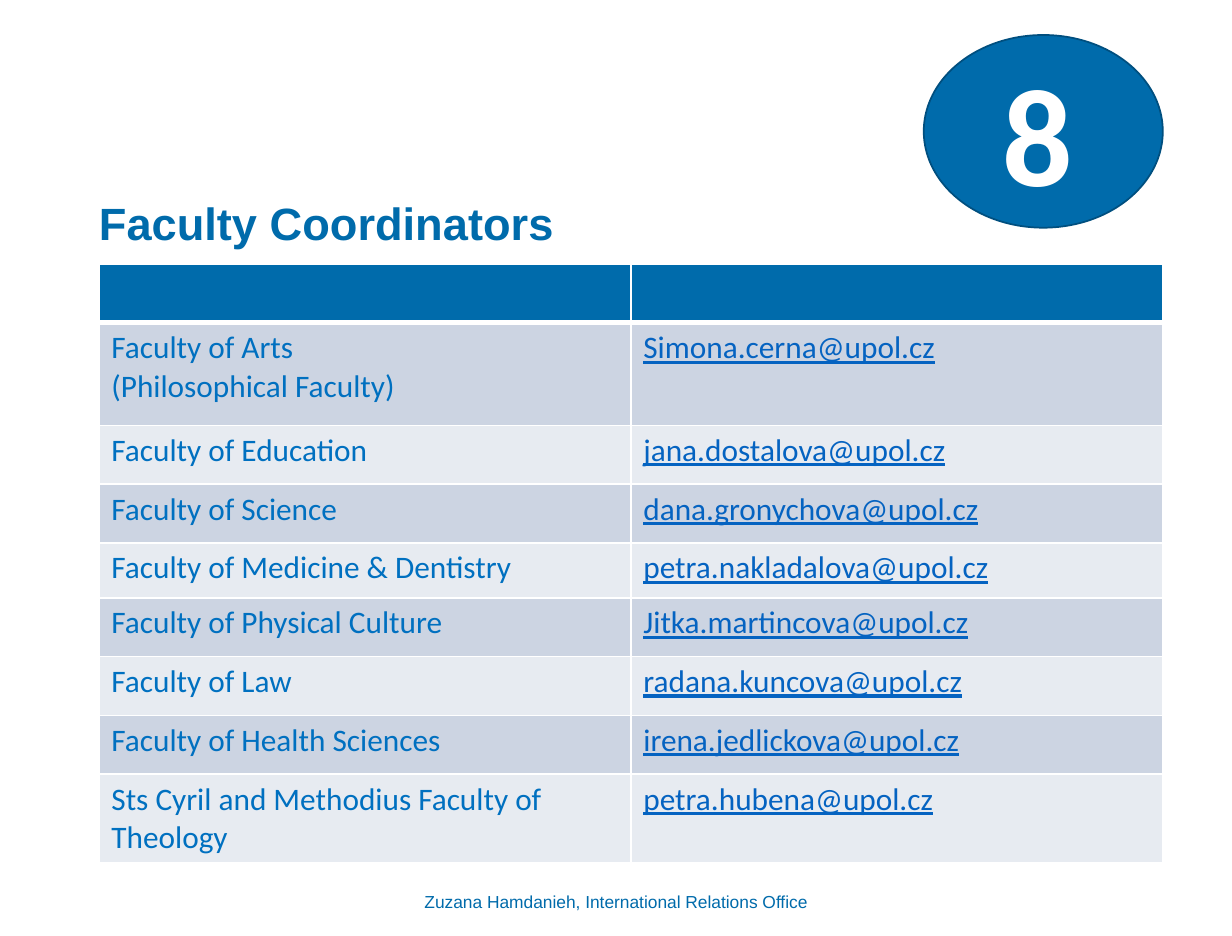
from lxml.etree import SubElement
from pptx import Presentation
from pptx.dml.color import RGBColor
from pptx.enum.shapes import MSO_SHAPE
from pptx.enum.text import MSO_ANCHOR, PP_ALIGN
from pptx.oxml.ns import qn
from pptx.util import Cm, Inches, Pt

BLUE = RGBColor(0x00, 0x6B, 0xAB)
DARK_BLUE = RGBColor(0x00, 0x4F, 0x7F)
TEXT_BLUE = RGBColor(0x00, 0x70, 0xC0)
LINK_BLUE = RGBColor(0x05, 0x63, 0xC1)
WHITE = RGBColor(0xFF, 0xFF, 0xFF)
BAND_DARK = RGBColor(0xCC, 0xD4, 0xE2)
BAND_LIGHT = RGBColor(0xE7, 0xEB, 0xF1)

COORDINATORS = [
    (["Faculty of Arts", "(Philosophical Faculty)"], "Simona.cerna@upol.cz"),
    (["Faculty of Education"], "jana.dostalova@upol.cz"),
    (["Faculty of Science"], "dana.gronychova@upol.cz"),
    (["Faculty of Medicine & Dentistry"], "petra.nakladalova@upol.cz"),
    (["Faculty of Physical Culture"], "Jitka.martincova@upol.cz"),
    (["Faculty of Law"], "radana.kuncova@upol.cz"),
    (["Faculty of Health Sciences"], "irena.jedlickova@upol.cz"),
    (["Sts Cyril and Methodius Faculty of Theology"], "petra.hubena@upol.cz"),
]
ROW_HEIGHTS = [0.47, 0.82, 0.47, 0.47, 0.44, 0.47, 0.47, 0.47, 0.7]


class CoordinatorSlide:
    heading_font = "Arial"
    body_font = "Calibri"

    def __init__(self, presentation):
        self.slide = presentation.slides.add_slide(presentation.slide_layouts[5])

    def add_run(self, paragraph, text, size, color, font, bold=False, underline=False):
        run = paragraph.add_run()
        run.text = text
        run.font.size = Pt(size)
        run.font.name = font
        run.font.color.rgb = color
        run.font.bold = bold
        run.font.underline = underline

    def prepare_frame(self, shape, anchor):
        frame = shape.text_frame
        frame.word_wrap = True
        frame.vertical_anchor = anchor
        frame.margin_left = frame.margin_right = 0
        frame.margin_top = frame.margin_bottom = 0
        return frame.paragraphs[0]

    def add_title(self, text, left, top, width, height):
        title = self.slide.shapes.title
        title.left, title.top = Inches(left), Inches(top)
        title.width, title.height = Inches(width), Inches(height)
        paragraph = self.prepare_frame(title, MSO_ANCHOR.TOP)
        paragraph.alignment = PP_ALIGN.LEFT
        paragraph.line_spacing = 0.9
        self.add_run(paragraph, text, 26, BLUE, self.heading_font, bold=True)

    def add_badge(self, text, left, top, width, height):
        badge = self.slide.shapes.add_shape(
            MSO_SHAPE.OVAL, Inches(left), Inches(top), Inches(width), Inches(height))
        badge.shadow.inherit = False
        badge.fill.solid()
        badge.fill.fore_color.rgb = BLUE
        badge.line.color.rgb = DARK_BLUE
        badge.line.width = Pt(1)
        paragraph = self.prepare_frame(badge, MSO_ANCHOR.MIDDLE)
        badge.text_frame.margin_left = Inches(0.35)
        paragraph.alignment = PP_ALIGN.LEFT
        self.add_run(paragraph, text, 80, WHITE, self.body_font, bold=True)

    def add_footer(self, text, left, top, width, height):
        footer = self.slide.shapes.add_textbox(
            Inches(left), Inches(top), Inches(width), Inches(height))
        paragraph = self.prepare_frame(footer, MSO_ANCHOR.BOTTOM)
        paragraph.alignment = PP_ALIGN.CENTER
        self.add_run(paragraph, text, 10, BLUE, self.heading_font)

    def style_cell(self, cell, color, top_width=1, bottom_width=1):
        properties = cell._tc.get_or_add_tcPr()
        widths = {"a:lnL": 1, "a:lnR": 1, "a:lnT": top_width, "a:lnB": bottom_width}
        for tag, width in widths.items():
            border = SubElement(properties, qn(tag), w=str(Pt(width)))
            fill = SubElement(border, qn("a:solidFill"))
            SubElement(fill, qn("a:srgbClr"), val=str(WHITE))
        cell.fill.solid()
        cell.fill.fore_color.rgb = color

    def add_table(self, entries, row_heights, left, top, column_width):
        table = self.slide.shapes.add_table(
            len(row_heights), 2, Inches(left), Inches(top),
            Inches(2 * column_width), Inches(sum(row_heights))).table
        table.horz_banding = False
        for column in table.columns:
            column.width = Inches(column_width)
        for row, height in zip(table.rows, row_heights):
            row.height = Inches(height)

        # Empty header row with a thick rule below
        for cell in table.rows[0].cells:
            self.style_cell(cell, BLUE, bottom_width=3)

        # Banded rows: faculty and e-mail address
        for index, (faculty_lines, email) in enumerate(entries):
            faculty_cell, email_cell = table.rows[index + 1].cells
            for cell in (faculty_cell, email_cell):
                self.style_cell(cell, BAND_LIGHT if index % 2 else BAND_DARK,
                                top_width=1 if index else 3)
            frame = faculty_cell.text_frame
            for number, line in enumerate(faculty_lines):
                paragraph = frame.add_paragraph() if number else frame.paragraphs[0]
                self.add_run(paragraph, line, 18, TEXT_BLUE, self.body_font)
            self.add_run(email_cell.text_frame.paragraphs[0], email, 18, LINK_BLUE,
                         self.body_font, underline=True)


def main():
    # Page of 25 by 19 centimetres
    presentation = Presentation()
    presentation.slide_width = Cm(25)
    presentation.slide_height = Cm(19)
    page = CoordinatorSlide(presentation)

    # Heading and section number
    page.add_title("Faculty Coordinators", 0.79, 1.61, 8.27, 0.57)
    page.add_badge("8", 7.38, 0.28, 1.91, 1.54)

    # Contacts and footer
    page.add_table(COORDINATORS, ROW_HEIGHTS, 0.79, 2.11, 4.25)
    page.add_footer("Zuzana Hamdanieh, International Relations Office",
                    1.18, 7.05, 7.48, 0.24)

    presentation.save("out.pptx")


if __name__ == "__main__":
    main()
